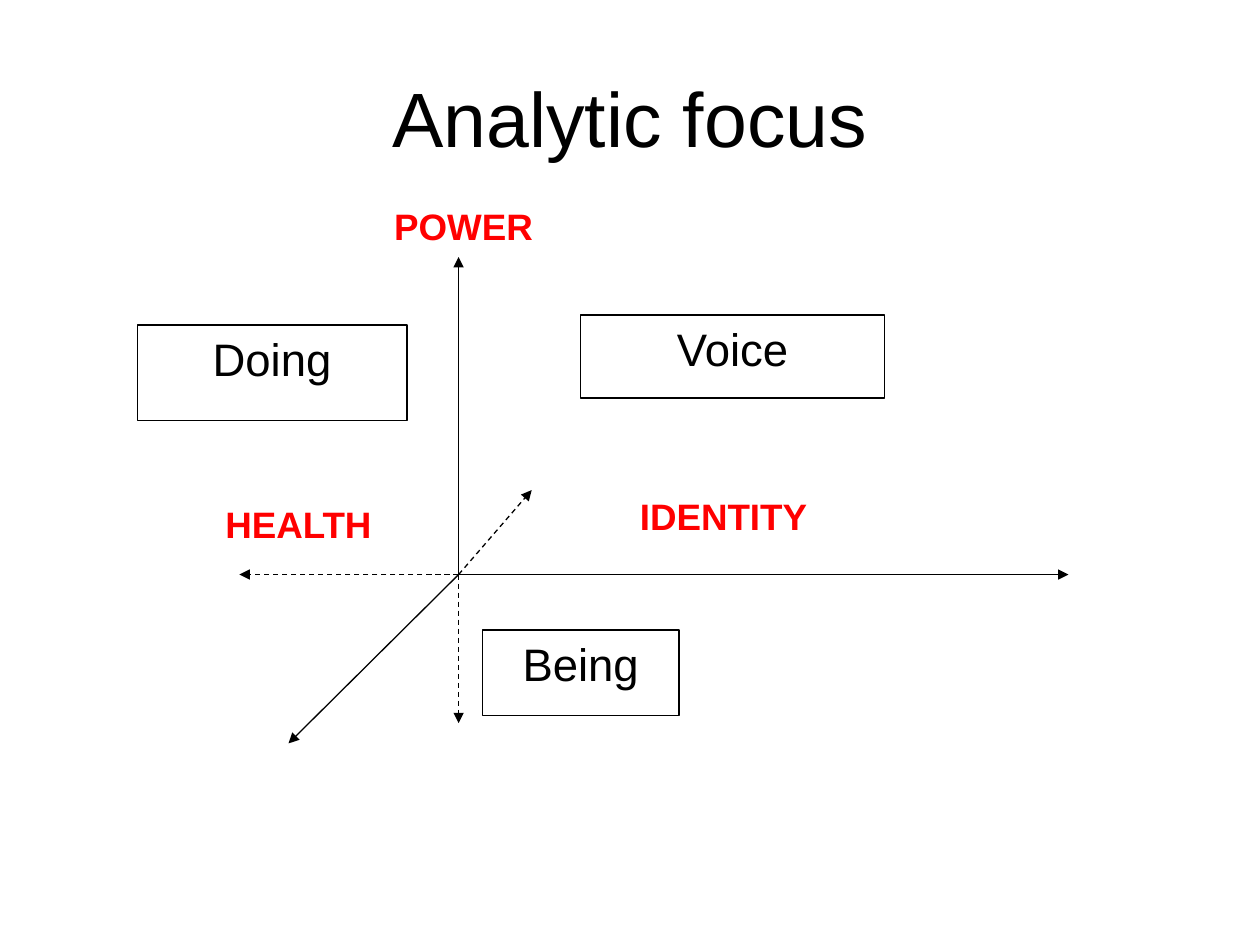
from dataclasses import dataclass

from lxml.etree import SubElement as Sub
from pptx import Presentation
from pptx.dml.color import RGBColor as Rgb
from pptx.enum.dml import MSO_LINE as Dash
from pptx.enum.shapes import MSO_CONNECTOR as Conn, MSO_SHAPE as Form
from pptx.enum.text import MSO_ANCHOR as Anchor, MSO_AUTO_SIZE as Fit, PP_ALIGN as Align
from pptx.oxml.ns import qn
from pptx.slide import Slide
from pptx.text.text import TextFrame
from pptx.util import Inches, Pt

COLORS = {"ink": "000000", "paper": "FFFFFF", "label": "FF0000"}
FONT = "Arial"
ORIGIN = (3.64, 4.56)


@dataclass
class Axis:
    """An arrow from the origin to a tip."""
    x: float
    y: float
    dashed: bool = False


@dataclass
class Box:
    """A word and its place in inches."""
    text: str
    x: float
    y: float
    w: float
    h: float
    fill: str = ""

    def place(self) -> list:
        """Return the place as lengths."""
        return [Inches(n) for n in (self.x, self.y, self.w, self.h)]


TITLE = Box("Analytic focus", 0.5, 0.3, 9, 1.25)
AXES = [
    Axis(3.64, 2.04),
    Axis(2.29, 5.9),
    Axis(8.48, 4.56),
    Axis(3.64, 5.74, True),
    Axis(1.9, 4.56, True),
    Axis(4.22, 3.89, True),
]
BOXES = [
    Box("Doing", 1.09, 2.58, 2.14, 0.76),
    Box("Voice", 4.61, 2.5, 2.41, 0.66, "paper"),
    Box("Being", 3.83, 5, 1.56, 0.68),
]
LABELS = [
    Box("HEALTH", 1.69, 3.93, 1.37, 0.45),
    Box("IDENTITY", 4.98, 3.87, 1.54, 0.45),
    Box("POWER", 3.03, 1.57, 1.32, 0.45),
]


def tint(name: str) -> Rgb:
    """Look up a named colour."""
    return Rgb.from_string(COLORS[name])


def write(frame: TextFrame, text: str, size: float, color: str = "ink",
          bold: bool = False, align: Align = Align.CENTER) -> None:
    """Write one styled run in a text frame."""
    para = frame.paragraphs[0]
    para.alignment = align
    run = para.add_run()
    run.text = text
    font = run.font
    font.name, font.size, font.bold = FONT, Pt(size), bold
    font.color.rgb = tint(color)


def draw_title(slide: Slide, box: Box) -> None:
    """Draw the slide title."""
    frame = slide.shapes.add_textbox(*box.place()).text_frame
    frame.word_wrap = True
    frame.vertical_anchor = Anchor.MIDDLE
    write(frame, box.text, 44)


def draw_axis(slide: Slide, axis: Axis) -> None:
    """Draw an arrow from the origin."""
    ends = [Inches(n) for n in (*ORIGIN, axis.x, axis.y)]
    link = slide.shapes.add_connector(Conn.STRAIGHT, *ends)
    line = link.line
    line.color.rgb = tint("ink")
    line.width = Pt(0.75)
    if axis.dashed:
        line.dash_style = Dash.DASH
    Sub(line._get_or_add_ln(), qn("a:tailEnd"), type="triangle")
    Sub(link._element.spPr, qn("a:effectLst"))


def draw_box(slide: Slide, box: Box) -> None:
    """Draw an outlined box with its word at the top."""
    shape = slide.shapes.add_shape(Form.RECTANGLE, *box.place())
    shape.shadow.inherit = False
    if box.fill:
        shape.fill.solid()
        shape.fill.fore_color.rgb = tint(box.fill)
    else:
        shape.fill.background()
    shape.line.color.rgb = tint("ink")
    shape.line.width = Pt(0.75)
    shape.text_frame.vertical_anchor = Anchor.TOP
    write(shape.text_frame, box.text, 26)


def draw_label(slide: Slide, box: Box) -> None:
    """Draw a bold axis label."""
    frame = slide.shapes.add_textbox(*box.place()).text_frame
    frame.word_wrap = False
    frame.auto_size = Fit.SHAPE_TO_FIT_TEXT
    write(frame, box.text, 21, "label", True, Align.LEFT)


def main() -> None:
    """Build and save the slide."""
    deck = Presentation()
    deck.slide_width, deck.slide_height = Inches(10), Inches(7.5)
    slide = deck.slides.add_slide(deck.slide_layouts[6])
    draw_title(slide, TITLE)
    for axis in AXES:
        draw_axis(slide, axis)
    for box in BOXES:
        draw_box(slide, box)
    for label in LABELS:
        draw_label(slide, label)
    deck.save("out.pptx")


if __name__ == "__main__":
    main()
